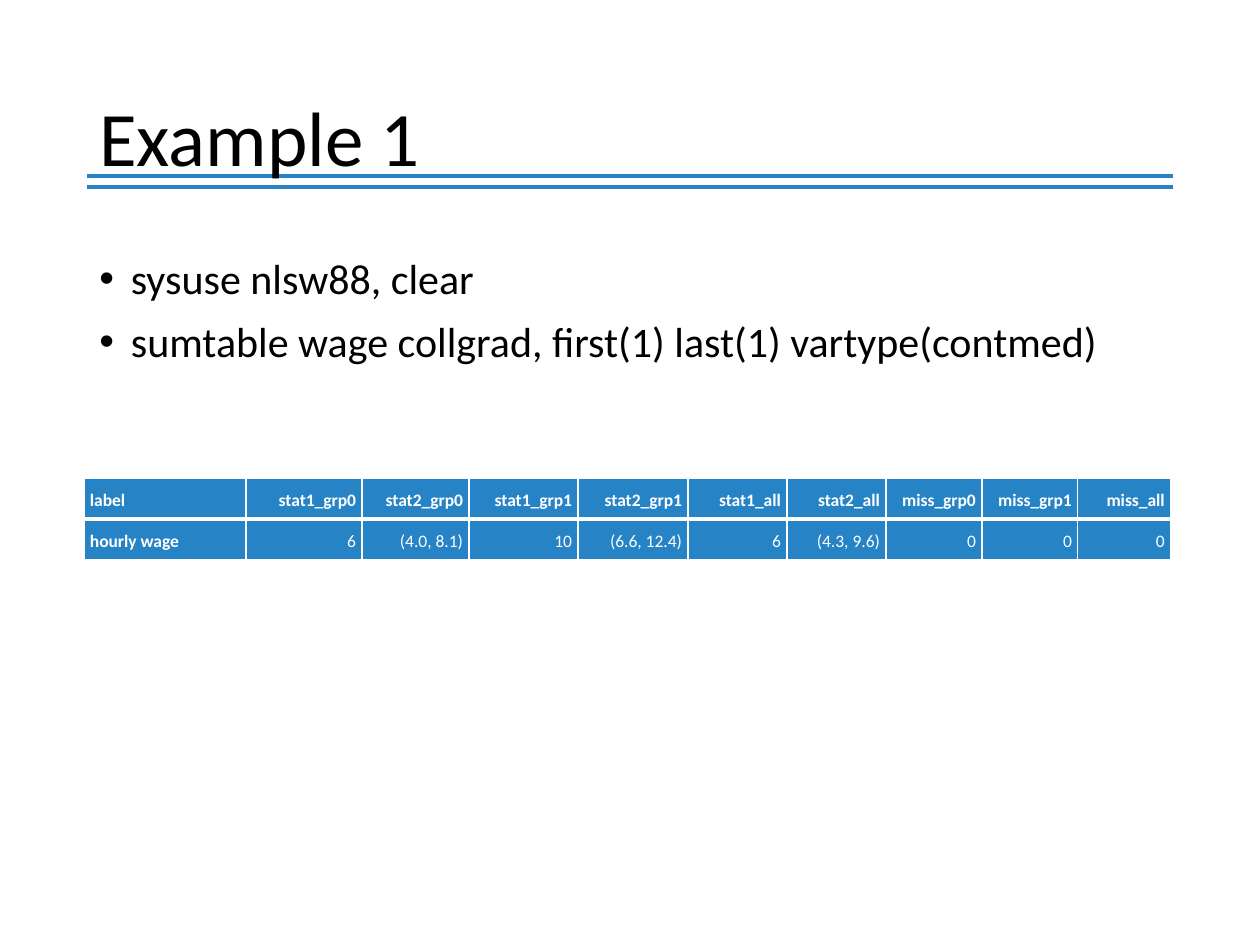
from dataclasses import dataclass

from lxml import etree
from pptx import Presentation
from pptx.dml.color import RGBColor
from pptx.enum.shapes import MSO_CONNECTOR
from pptx.enum.text import MSO_ANCHOR, PP_ALIGN
from pptx.oxml.ns import qn
from pptx.util import Pt

SCALE = 914400 / 126
BLUE = RGBColor(0x26, 0x83, 0xC6)
WHITE = RGBColor(0xFF, 0xFF, 0xFF)
BLACK = RGBColor(0, 0, 0)
FONT = "Calibri"
LEFT, RIGHT = PP_ALIGN.LEFT, PP_ALIGN.RIGHT
TOP, MIDDLE = MSO_ANCHOR.TOP, MSO_ANCHOR.MIDDLE
STRAIGHT = MSO_CONNECTOR.STRAIGHT


@dataclass
class Box:
    left: int
    top: int
    width: int
    height: int


TITLE = Box(87, 50, 1086, 183)
BODY = Box(87, 252, 1086, 600)
RULES = (176, 187)
WIDTHS = (162, 116, 107, 109, 110, 99, 99, 96, 96, 93)
GRID = Box(84, 478, sum(WIDTHS), 82)
HEADS = ("label", "stat1_grp0", "stat2_grp0", "stat1_grp1", "stat2_grp1",
         "stat1_all", "stat2_all", "miss_grp0", "miss_grp1", "miss_all")
WAGES = ("hourly wage", "6", "(4.0, 8.1)", "10", "(6.6, 12.4)",
         "6", "(4.3, 9.6)", "0", "0", "0")
STEPS = ("sysuse nlsw88, clear",
         "sumtable wage collgrad, first(1) last(1) vartype(contmed)")


def px(count: int) -> int:
    return round(count * SCALE)


def place(box: Box) -> tuple:
    return px(box.left), px(box.top), px(box.width), px(box.height)


def write(frame, *lines: str, size: int, color=BLACK, bold=False,
          align=LEFT, space=0.9, gap=0, bullet="") -> None:
    for row, line in enumerate(lines):
        para = frame.add_paragraph() if row else frame.paragraphs[0]
        para.alignment = align
        para.line_spacing = space
        para.space_before = Pt(gap if row else 0)
        if bullet:
            props = para._p.get_or_add_pPr()
            props.set("marL", str(Pt(18)))
            props.set("indent", str(-Pt(18)))
            face = etree.SubElement(props, qn("a:buFont"))
            face.set("typeface", "Arial")
            mark = etree.SubElement(props, qn("a:buChar"))
            mark.set("char", bullet)
        run = para.add_run()
        run.text = line
        font = run.font
        font.name, font.size, font.bold = FONT, Pt(size), bold
        font.color.rgb = color


def add_text(slide, box: Box, *lines: str, anchor=TOP, **style) -> None:
    frame = slide.shapes.add_textbox(*place(box)).text_frame
    frame.word_wrap = True
    frame.vertical_anchor = anchor
    write(frame, *lines, **style)


def add_rule(slide, top: int) -> None:
    right = TITLE.left + TITLE.width
    rule = slide.shapes.add_connector(
        STRAIGHT, px(TITLE.left), px(top), px(right), px(top))
    rule.line.color.rgb = BLUE
    rule.line.width = Pt(2.25)
    etree.SubElement(rule._element.spPr, qn("a:effectLst"))


def add_edges(cell, **widths: int) -> None:
    props = cell._tc.get_or_add_tcPr()
    for spot, (side, width) in enumerate(widths.items()):
        edge = etree.Element(qn(f"a:ln{side}"), w=str(Pt(width)))
        fill = etree.SubElement(edge, qn("a:solidFill"))
        etree.SubElement(fill, qn("a:srgbClr"), val=str(WHITE))
        props.insert(spot, edge)


def add_grid(slide, box: Box, rows: tuple) -> None:
    table = slide.shapes.add_table(len(rows), len(WIDTHS), *place(box)).table
    table.first_row = table.horz_banding = False
    for col, width in zip(table.columns, WIDTHS):
        col.width = px(width)
    for row, words in enumerate(rows):
        for col, word in enumerate(words):
            cell = table.cell(row, col)
            cell.fill.solid()
            cell.fill.fore_color.rgb = BLUE
            cell.vertical_anchor = MIDDLE
            cell.margin_left = cell.margin_right = px(6)
            cell.margin_top = cell.margin_bottom = px(6)
            write(cell.text_frame, word, size=10, color=WHITE, space=1.15,
                  bold=row == 0 or col == 0, align=RIGHT if col else LEFT)
            add_edges(cell, L=1, R=1, T=3 if row else 1, B=1 if row else 3)


def main() -> None:
    deck = Presentation()
    deck.slide_width, deck.slide_height = px(1260), px(945)
    slide = deck.slides.add_slide(deck.slide_layouts[6])
    for top in RULES:
        add_rule(slide, top)
    add_text(slide, TITLE, "Example 1", anchor=MIDDLE, size=44)
    add_text(slide, BODY, *STEPS, size=24, gap=10, bullet="•")
    add_grid(slide, GRID, (HEADS, WAGES))
    deck.save("out.pptx")


if __name__ == "__main__":
    main()
